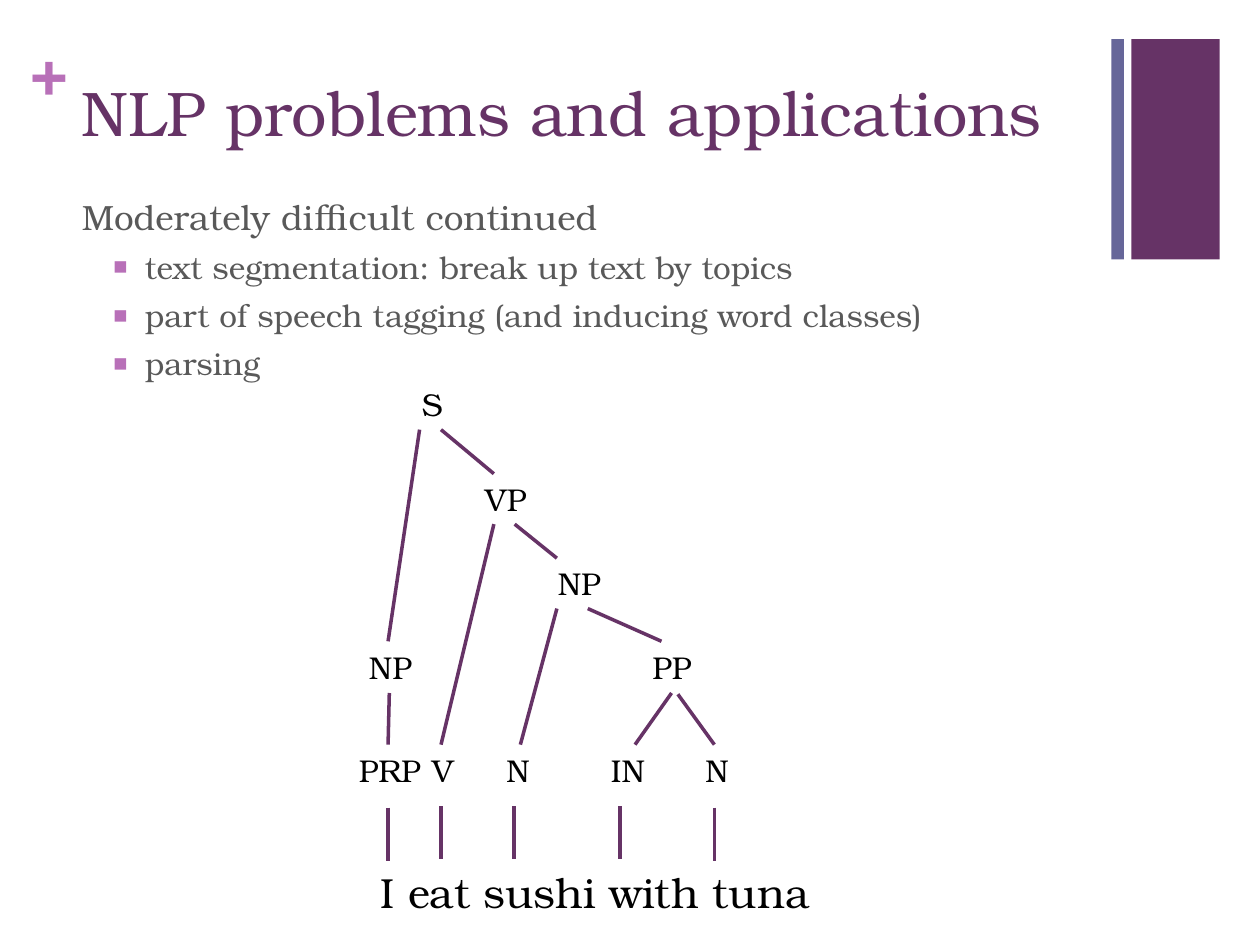
"""Build a slide on NLP problems with a parse tree of a short sentence."""
from dataclasses import dataclass
from typing import Optional

from lxml.etree import SubElement
from pptx import Presentation
from pptx.dml.color import RGBColor
from pptx.enum.shapes import MSO_CONNECTOR, MSO_SHAPE
from pptx.enum.text import MSO_ANCHOR, MSO_AUTO_SIZE, PP_ALIGN
from pptx.oxml.ns import qn
from pptx.util import Inches, Pt

BOTTOM, TOP = 2, 0


@dataclass(frozen=True)
class Theme:
    """Font, colours and type sizes."""
    font: str = "TeX Gyre Bonum"
    plum: str = "663366"
    slate: str = "666699"
    orchid: str = "B870B8"
    grey: str = "595959"
    black: str = "000000"
    title: int = 36
    lead: int = 20
    item: int = 18
    sentence: int = 24
    branch: int = 2


@dataclass(frozen=True)
class Node:
    """A syntactic label and the place of its box."""
    label: str
    left: float
    top: float
    width: float


@dataclass(frozen=True)
class Branch:
    """A tree line, with the nodes it joins at their midpoints."""
    start: tuple[float, float]
    end: tuple[float, float]
    parent: Optional[str] = None
    child: Optional[str] = None


THEME = Theme()
NODE_HEIGHT = 0.4
S_TOP, VP_TOP, OBJECT_TOP, PHRASE_TOP, TAG_TOP = 3.01, 3.76, 4.43, 5.09, 5.91

NODES = {
    "sentence": Node("S", 3.25, S_TOP, 0.67),
    "verb phrase": Node("VP", 3.75, VP_TOP, 0.67),
    "object": Node("NP", 4.33, OBJECT_TOP, 0.67),
    "subject": Node("NP", 2.83, PHRASE_TOP, 1.08),
    "preposition phrase": Node("PP", 5.08, PHRASE_TOP, 0.75),
    "pronoun": Node("PRP", 2.75, TAG_TOP, 0.92),
    "verb": Node("V", 3.33, TAG_TOP, 1.08),
    "sushi noun": Node("N", 3.92, TAG_TOP, 0.42),
    "preposition": Node("IN", 4.75, TAG_TOP, 0.58),
    "tuna noun": Node("N", 5.5, TAG_TOP, 0.58),
}
BRANCHES = [
    Branch((3.33, 3.41), (3.08, PHRASE_TOP)),
    Branch((3.5, 3.41), (3.92, VP_TOP)),
    Branch((3.92, 4.16), (3.5, TAG_TOP)),
    Branch((4.08, 4.16), (4.42, OBJECT_TOP), parent="verb phrase"),
    Branch((4.42, 4.83), (4.12, TAG_TOP), child="sushi noun"),
    Branch((4.67, 4.83), (5.25, PHRASE_TOP), parent="object"),
    Branch((3.09, 5.5), (3.08, TAG_TOP)),
    Branch((5.33, 5.5), (5.04, TAG_TOP)),
    Branch((5.38, 5.51), (5.67, TAG_TOP)),
]
WORD_STEMS = [(3.08, 6.41), (3.5, 6.4), (4.08, 6.4), (4.92, 6.4), (5.67, 6.41)]
STEM_LENGTH = 0.42
TASKS = [
    "text segmentation: break up text by topics",
    "part of speech tagging (and inducing word classes)",
    "parsing",
]


def style(paragraph, size: int, color: str, bold: bool = False) -> None:
    """Format every run of a paragraph."""
    for run in paragraph.runs:
        run.font.name = THEME.font
        run.font.size = Pt(size)
        run.font.bold = bold
        run.font.color.rgb = RGBColor.from_string(color)


def place(shape, left: float, top: float, width: float, height: float) -> None:
    """Move and size a shape."""
    shape.left, shape.top = Inches(left), Inches(top)
    shape.width, shape.height = Inches(width), Inches(height)


def add_bar(slide, left: float, width: float, color: str) -> None:
    """Add one of the upright corner bars."""
    bar = slide.shapes.add_shape(MSO_SHAPE.RECTANGLE, Inches(left), Inches(0.31),
                                 Inches(width), Inches(1.75))
    bar.shadow.inherit = False
    bar.fill.solid()
    bar.fill.fore_color.rgb = RGBColor.from_string(color)
    bar.line.fill.background()


def add_text(slide, text: str, left: float, top: float, width: float, height: float,
             size: int, color: str = THEME.black, bold: bool = False):
    """Add a wrapped text box that grows with its text."""
    label = slide.shapes.add_textbox(Inches(left), Inches(top), Inches(width), Inches(height))
    frame = label.text_frame
    frame.word_wrap = True
    frame.auto_size = MSO_AUTO_SIZE.SHAPE_TO_FIT_TEXT
    frame.text = text
    style(frame.paragraphs[0], size, color, bold)
    return label


def add_branch(slide, branch: Branch, labels: dict) -> None:
    """Draw a tree line and join it to its nodes."""
    line = slide.shapes.add_connector(MSO_CONNECTOR.STRAIGHT,
                                      *map(Inches, branch.start + branch.end))
    line.line.color.rgb = RGBColor.from_string(THEME.plum)
    line.line.width = Pt(THEME.branch)
    SubElement(line._element.spPr, qn("a:effectLst"))
    if branch.parent:
        line.begin_connect(labels[branch.parent], BOTTOM)
    if branch.child:
        line.end_connect(labels[branch.child], TOP)


def set_bullet(paragraph, indent: float, hanging: float, bullet: str = "") -> None:
    """Set the indent and the bullet of a list paragraph."""
    properties = paragraph._p.get_or_add_pPr()
    properties.set("marL", str(Inches(indent)))
    properties.set("indent", str(Inches(-hanging)))
    if not bullet:
        SubElement(properties, qn("a:buNone"))
        return
    color = SubElement(properties, qn("a:buClr"))
    SubElement(color, qn("a:srgbClr"), val=THEME.orchid)
    SubElement(properties, qn("a:buSzPct"), val="75000")
    SubElement(properties, qn("a:buChar"), char=bullet)


def fill_title(title) -> None:
    """Write the slide title."""
    place(title, 0.55, 0.53, 8.26, 1.22)
    frame = title.text_frame
    frame.text = "NLP problems and applications"
    frame.auto_size = MSO_AUTO_SIZE.NONE
    frame.vertical_anchor = MSO_ANCHOR.TOP
    frame.paragraphs[0].alignment = PP_ALIGN.LEFT
    style(frame.paragraphs[0], THEME.title, THEME.plum)


def fill_body(body) -> None:
    """Write the lead line and its bulleted tasks."""
    place(body, 0.55, 1.5, 8.26, 2.17)
    frame = body.text_frame
    frame.text = "Moderately difficult continued"
    frame.auto_size = MSO_AUTO_SIZE.NONE
    lead = frame.paragraphs[0]
    lead.space_before = Pt(20)
    set_bullet(lead, 0, 0)
    style(lead, THEME.lead, THEME.grey)
    for task in TASKS:
        item = frame.add_paragraph()
        item.text = task
        item.level = 1
        item.space_before = Pt(6)
        set_bullet(item, 0.5, 0.25, "■")
        style(item, THEME.item, THEME.grey)


def main() -> None:
    """Build and save the slide."""
    deck = Presentation()
    deck.slide_width, deck.slide_height = Inches(10), Inches(7.5)
    slide = deck.slides.add_slide(deck.slide_layouts[1])

    add_bar(slide, 8.98, 0.7, THEME.plum)
    plus = add_text(slide, "+", 0.24, 0.25, 0.29, 0.61, THEME.title, THEME.orchid, bold=True)
    margins = plus.text_frame
    margins.margin_left = margins.margin_top = margins.margin_right = margins.margin_bottom = 0
    add_bar(slide, 8.82, 0.1, THEME.slate)
    fill_title(slide.shapes.title)
    fill_body(slide.placeholders[1])

    add_text(slide, "I eat sushi with tuna", 2.92, 6.83, 4.08, 0.5, THEME.sentence)
    labels = {
        role: add_text(slide, node.label, node.left, node.top, node.width, NODE_HEIGHT, THEME.item)
        for role, node in NODES.items()
    }
    stems = [Branch((x, y), (x, y + STEM_LENGTH)) for x, y in WORD_STEMS]
    for branch in BRANCHES + stems:
        add_branch(slide, branch, labels)
    deck.save("out.pptx")


if __name__ == "__main__":
    main()
